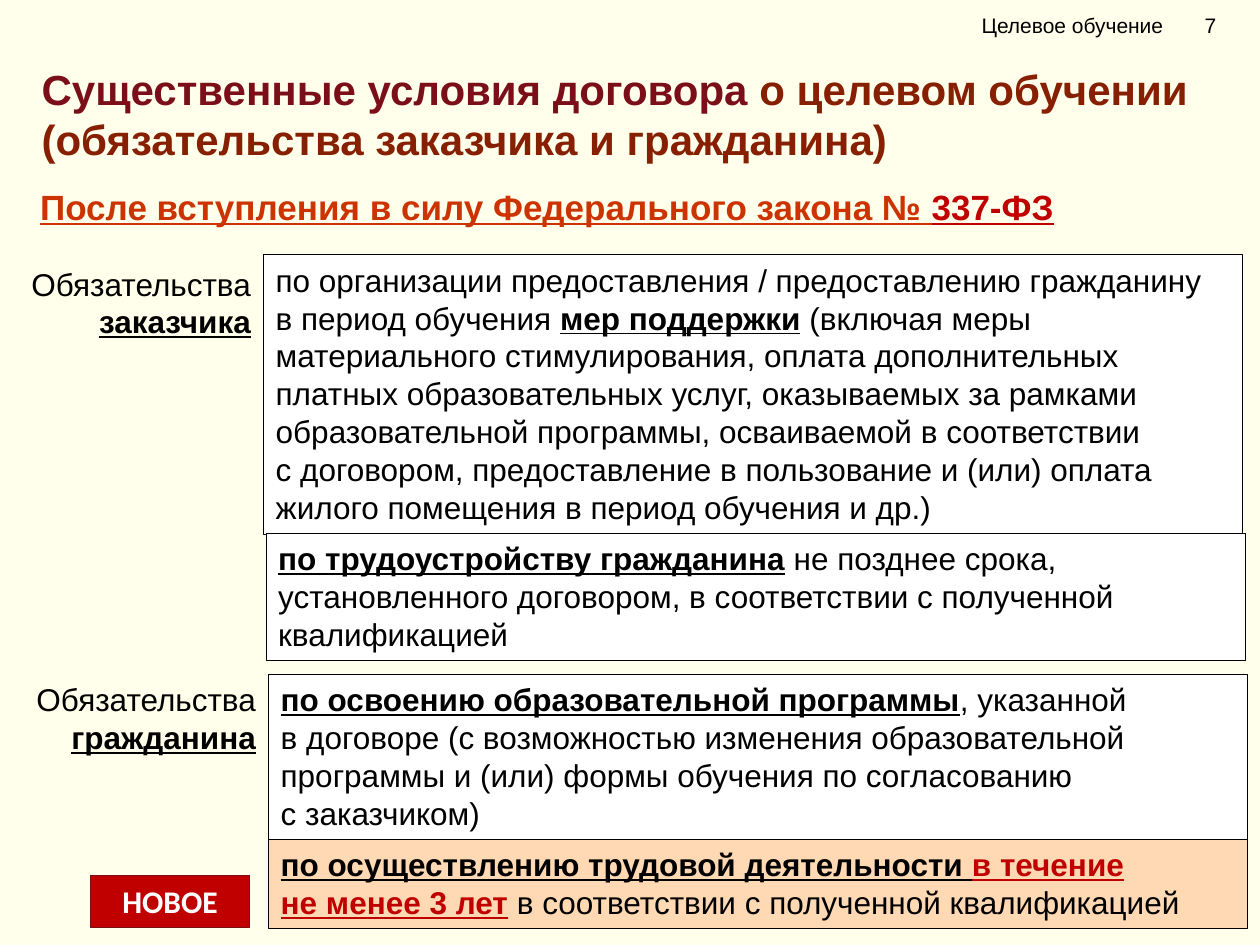
import pptx
import pptx.util
import pptx.dml.color
import pptx.enum.shapes
import pptx.enum.text
import lxml.etree
from pptx.util import Inches

ALIGN = pptx.enum.text.PP_ALIGN
ANCHOR = pptx.enum.text.MSO_ANCHOR
BLACK, WHITE, RED, MAROON = "000000", "FFFFFF", "C00000", "7B0F19"


def color(value):
    return pptx.dml.color.RGBColor.from_string(value)


def write(shape, paragraphs, size=18, name="Arial", align=ALIGN.LEFT, anchor=ANCHOR.TOP):
    frame = shape.text_frame
    frame.word_wrap = True
    frame.auto_size = pptx.enum.text.MSO_AUTO_SIZE.NONE
    frame.vertical_anchor = anchor
    for index, runs in enumerate(paragraphs):
        paragraph = frame.add_paragraph() if index else frame.paragraphs[0]
        paragraph.alignment = align
        paragraph.font.size = pptx.util.Pt(size)
        paragraph.font.name = name
        for text, hue, bold, underline in runs:
            run = paragraph.add_run()
            run.text = text
            run.font.color.rgb = color(hue)
            run.font.bold = bold
            run.font.underline = underline


def plain(text):
    return text, BLACK, False, False


def key(text, hue=BLACK):
    return text, hue, True, True


deck = pptx.Presentation()
deck.slide_width, deck.slide_height = Inches(10), Inches(7.5)
slide = deck.slides.add_slide(deck.slide_layouts[5])
slide.background.fill.solid()
slide.background.fill.fore_color.rgb = color("FFFFEB")

title = slide.shapes.title
title.left, title.top, title.width, title.height = Inches(0.23), Inches(0.45), Inches(9.62), Inches(0.9)
write(title, [[("Существенные условия договора ", MAROON, True, False),
               ("о целевом обучении (обязательства заказчика и гражданина)", "871F03", True, False)]], 24)

law = slide.shapes.add_textbox(Inches(0.22), Inches(1.42), Inches(8.9), Inches(0.44))
write(law, [[key("После вступления в силу Федерального закона № ", "CC3300"), key("337-ФЗ", RED)]], 20)

for left, top, party in [(0, 2.05, "заказчика"), (0.04, 5.35, "гражданина")]:
    label = slide.shapes.add_textbox(Inches(left), Inches(top), Inches(2.09), Inches(0.71))
    write(label, [[plain("Обязательства "), key(party)]], align=ALIGN.RIGHT)

duties = [
    (2.09, 2.02, 2.22, WHITE, [
        [plain("по организации предоставления / предоставлению гражданину")],
        [plain("в период обучения "), key("мер поддержки"),
         plain(" (включая меры материального стимулирования, оплата дополнительных платных "
               "образовательных услуг, оказываемых за рамками образовательной программы, "
               "осваиваемой в соответствии")],
        [plain("с договором, предоставление в пользование и (или) оплата жилого помещения "
               "в период обучения и др.)")]]),
    (2.11, 4.23, 1.01, WHITE, [
        [key("по трудоустройству гражданина"),
         plain(" не позднее срока, установленного договором, в соответствии с полученной квалификацией")]]),
    (2.13, 5.35, 1.31, WHITE, [
        [key("по освоению образовательной программы"), plain(", указанной")],
        [plain("в договоре (с возможностью изменения образовательной программы и (или) "
               "формы обучения по согласованию")],
        [plain("с заказчиком)")]]),
    (2.13, 6.66, 0.71, "FFD9B3", [
        [key("по осуществлению трудовой деятельности "), key("в течение", RED)],
        [key("не менее 3 лет", RED), plain(" в соответствии с полученной квалификацией")]]),
]
boxes = [(left, top, 7.77, height, fill, BLACK, 0.25, text, "Arial", ALIGN.LEFT)
         for left, top, height, fill, text in duties]
boxes.append((0.72, 6.95, 1.26, 0.41, RED, MAROON, 0.75,
              [[("НОВОЕ", WHITE, True, False)]], "Calibri", ALIGN.CENTER))

for left, top, width, height, fill, outline, weight, text, name, align in boxes:
    box = slide.shapes.add_shape(pptx.enum.shapes.MSO_SHAPE.RECTANGLE,
                                 Inches(left), Inches(top), Inches(width), Inches(height))
    box.shadow.inherit = False
    box.fill.solid()
    box.fill.fore_color.rgb = color(fill)
    box.line.color.rgb = color(outline)
    box.line.width = pptx.util.Pt(weight)
    write(box, text, name=name, align=align)

header = slide.shapes.add_textbox(Inches(7.44), Inches(0), Inches(2.56), Inches(0.4))
header.text_frame.margin_left = Inches(0.35)
write(header, [[plain("Целевое обучение\t7")]], 12, anchor=ANCHOR.MIDDLE)
properties = header.text_frame.paragraphs[0].font._element.getparent()
namespace = "{http://schemas.openxmlformats.org/drawingml/2006/main}"
tabs = lxml.etree.Element(namespace + "tabLst")
lxml.etree.SubElement(tabs, namespace + "tab", pos=str(Inches(1.77)), algn="l")
properties.insert(0, tabs)

deck.save("out.pptx")
